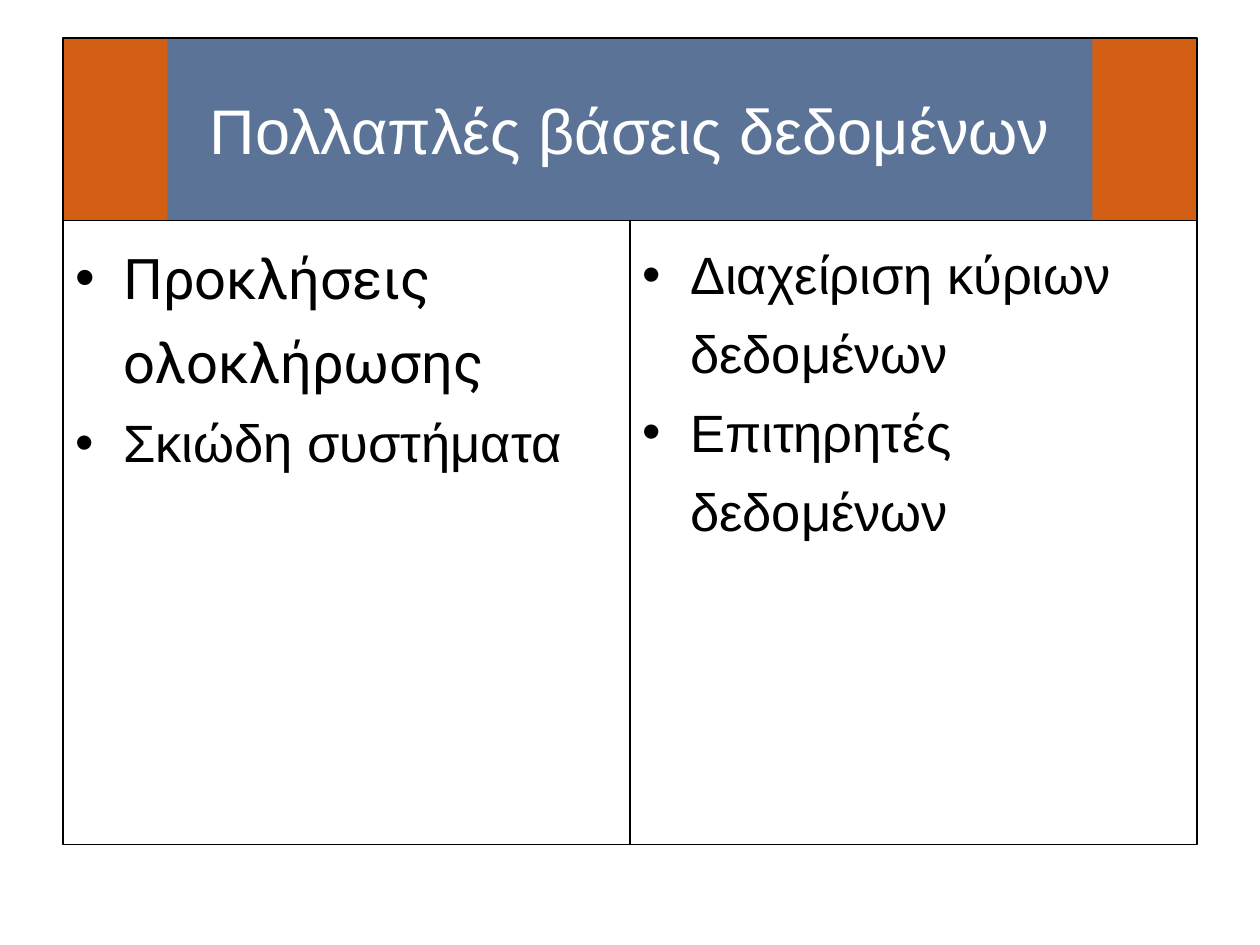
from dataclasses import dataclass

from lxml.etree import SubElement
from pptx import Presentation
from pptx.dml.color import RGBColor
from pptx.enum.shapes import MSO_SHAPE
from pptx.enum.text import MSO_ANCHOR, PP_ALIGN
from pptx.oxml.ns import qn
from pptx.util import Inches, Pt


@dataclass(frozen=True)
class Theme:
    banner: str = "5A7396"
    accent: str = "D25F14"
    ink: str = "000000"
    light: str = "FFFFFF"
    font: str = "Arial"
    lead_font: str = "Roboto"
    title_size: int = 36
    lead_size: int = 32
    body_size: int = 30


THEME = Theme()
LEFT, TOP, WIDTH = 0.5, 0.3, 9
BANNER_HEIGHT, BODY_HEIGHT = 1.45, 4.95
END_WIDTH = 0.83
COLUMN_WIDTH = WIDTH / 2
INDENT = 0.38

COLUMNS = [
    [
        ("Προκλήσεις ολοκλήρωσης", {"font": THEME.lead_font, "size": THEME.lead_size}),
        ("Σκιώδη συστήματα", {}),
    ],
    [
        ("Διαχείριση κύριων δεδομένων", {}),
        ("Επιτηρητές δεδομένων", {}),
    ],
]


def add_box(page, left, top, width, height, fill=None, line=None, line_width=0.75):
    box = page.shapes.add_shape(
        MSO_SHAPE.RECTANGLE, Inches(left), Inches(top), Inches(width), Inches(height)
    )
    box.shadow.inherit = False
    if fill:
        box.fill.solid()
        box.fill.fore_color.rgb = RGBColor.from_string(fill)
    else:
        box.fill.background()
    if line:
        box.line.color.rgb = RGBColor.from_string(line)
        box.line.width = Pt(line_width)
    else:
        box.line.fill.background()
    return box


def write_text(para, text, font=THEME.font, size=THEME.body_size,
               color=THEME.ink, align=PP_ALIGN.LEFT):
    para.alignment = align
    span = para.add_run()
    span.text = text
    span.font.name = font
    span.font.size = Pt(size)
    span.font.color.rgb = RGBColor.from_string(color)


def add_bullet(para):
    para.line_spacing = 1.25
    properties = para._p.get_or_add_pPr()
    properties.set("marL", str(Inches(INDENT)))
    properties.set("indent", str(-Inches(INDENT)))
    SubElement(properties, qn("a:buFont"), typeface=THEME.font)
    SubElement(properties, qn("a:buChar"), char="•")


def add_title(page, text):
    box = add_box(page, LEFT, TOP, WIDTH, BANNER_HEIGHT, fill=THEME.banner)
    frame = box.text_frame
    frame.word_wrap = True
    frame.vertical_anchor = MSO_ANCHOR.MIDDLE
    write_text(frame.paragraphs[0], text, size=THEME.title_size,
               color=THEME.light, align=PP_ALIGN.CENTER)


def add_column(page, left, items):
    box = add_box(page, left, TOP + BANNER_HEIGHT, COLUMN_WIDTH, BODY_HEIGHT,
                  line=THEME.ink)
    frame = box.text_frame
    frame.word_wrap = True
    frame.vertical_anchor = MSO_ANCHOR.TOP
    for index, (text, style) in enumerate(items):
        para = frame.add_paragraph() if index else frame.paragraphs[0]
        write_text(para, text, **style)
        add_bullet(para)


def main():
    deck = Presentation()
    deck.slide_width, deck.slide_height = Inches(10), Inches(7.5)
    page = deck.slides.add_slide(deck.slide_layouts[6])

    # Title banner
    add_title(page, "Πολλαπλές βάσεις δεδομένων")

    # Two bulleted columns
    for index, items in enumerate(COLUMNS):
        add_column(page, LEFT + index * COLUMN_WIDTH, items)

    # Coloured banner ends and outline
    for left in (LEFT, LEFT + WIDTH - END_WIDTH):
        add_box(page, left, TOP, END_WIDTH, BANNER_HEIGHT, fill=THEME.accent)
    add_box(page, LEFT, TOP, WIDTH, BANNER_HEIGHT, line=THEME.ink, line_width=1)

    deck.save("out.pptx")


if __name__ == "__main__":
    main()
